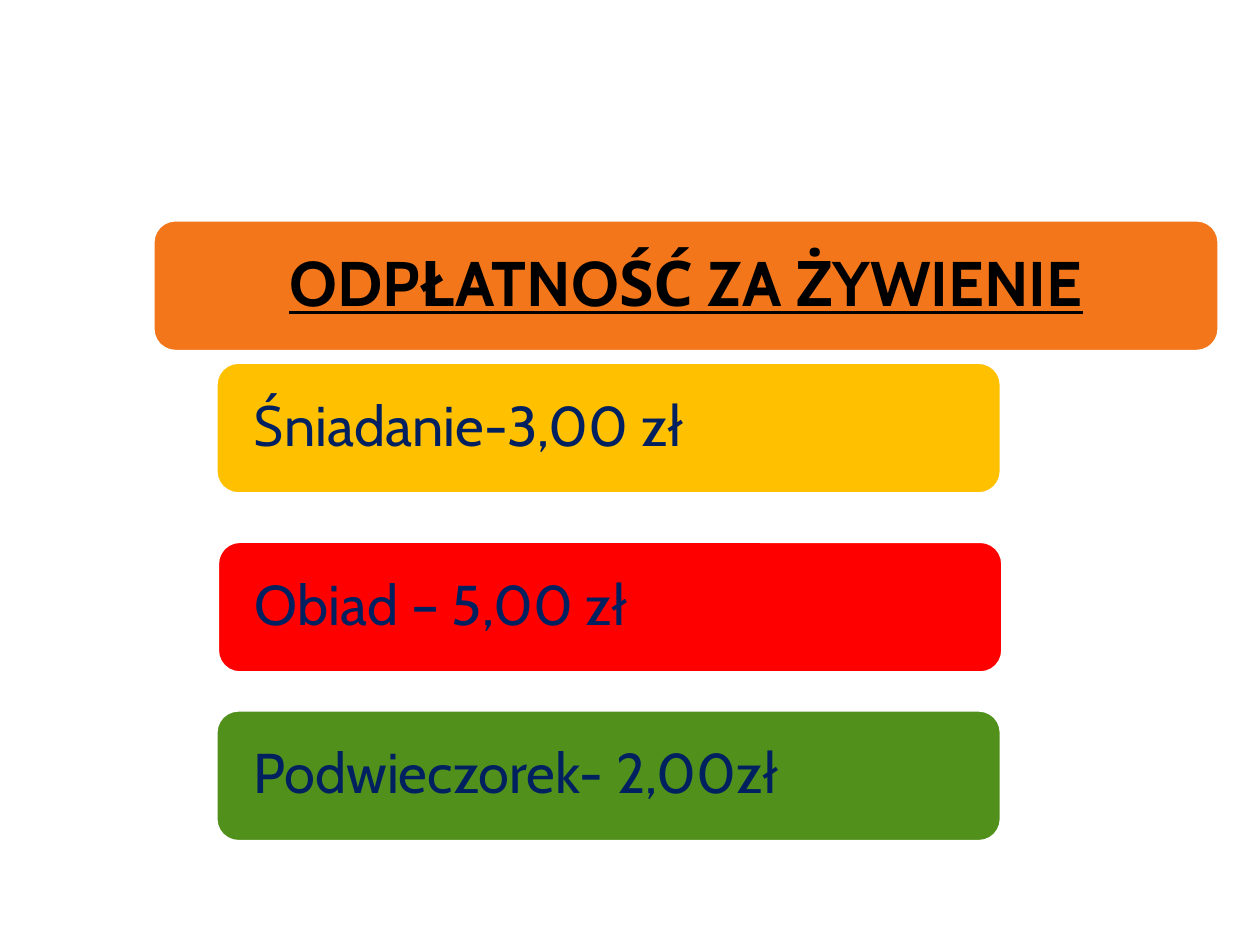
from dataclasses import dataclass

from pptx import Presentation
from pptx import util as u
from pptx.dml.color import RGBColor
from pptx.enum import shapes, text


@dataclass(frozen=True)
class Theme:
    font: str = "Cabin"
    title_size: int = 36
    price_size: int = 32
    title_color: str = "000000"
    price_color: str = "002060"
    outline: str = "FFFFFF"
    orange: str = "F3771A"
    yellow: str = "FFC000"
    red: str = "FF0000"
    green: str = "52901C"


THEME = Theme()
BAR_HEIGHT = 2.62
PRICE_WIDTH = 15.8


def write_text(shape, content, *, size, color, bold=False, underline=False,
               align=text.PP_ALIGN.LEFT):
    frame = shape.text_frame
    frame.word_wrap = True
    frame.vertical_anchor = text.MSO_ANCHOR.MIDDLE
    frame.margin_left = frame.margin_right = u.Cm(0.61)
    frame.margin_top = frame.margin_bottom = 0
    paragraph = frame.paragraphs[0]
    paragraph.alignment = align
    paragraph.line_spacing = 0.9
    run = paragraph.add_run()
    run.text = content
    font = run.font
    font.name = THEME.font
    font.size = u.Pt(size)
    font.bold = bold
    font.underline = underline
    font.color.rgb = RGBColor.from_string(color)


def add_bar(slide, left, top, width, fill):
    shape = slide.shapes.add_shape(
        shapes.MSO_SHAPE.ROUNDED_RECTANGLE,
        u.Cm(left), u.Cm(top), u.Cm(width), u.Cm(BAR_HEIGHT))
    shape.shadow.inherit = False
    shape.fill.solid()
    shape.fill.fore_color.rgb = RGBColor.from_string(fill)
    shape.line.color.rgb = RGBColor.from_string(THEME.outline)
    shape.line.width = u.Pt(1)
    return shape


def main():
    presentation = Presentation()
    presentation.slide_width = u.Cm(25.4)
    presentation.slide_height = u.Cm(19.05)
    slide = presentation.slides.add_slide(presentation.slide_layouts[6])

    # Meal prices
    meals = [
        ("Śniadanie-3,00 zł", 4.37, 7.32, THEME.yellow),
        ("Obiad – 5,00 zł", 4.4, 10.93, THEME.red),
        ("Podwieczorek- 2,00zł", 4.37, 14.33, THEME.green),
    ]
    for label, left, top, fill in meals:
        bar = add_bar(slide, left, top, PRICE_WIDTH, fill)
        write_text(bar, label, size=THEME.price_size, color=THEME.price_color)

    # Heading
    heading = add_bar(slide, 3.1, 4.45, 21.46, THEME.orange)
    write_text(heading, "ODPŁATNOŚĆ ZA ŻYWIENIE", size=THEME.title_size,
               color=THEME.title_color, bold=True, underline=True,
               align=text.PP_ALIGN.CENTER)

    presentation.save("out.pptx")


if __name__ == "__main__":
    main()
